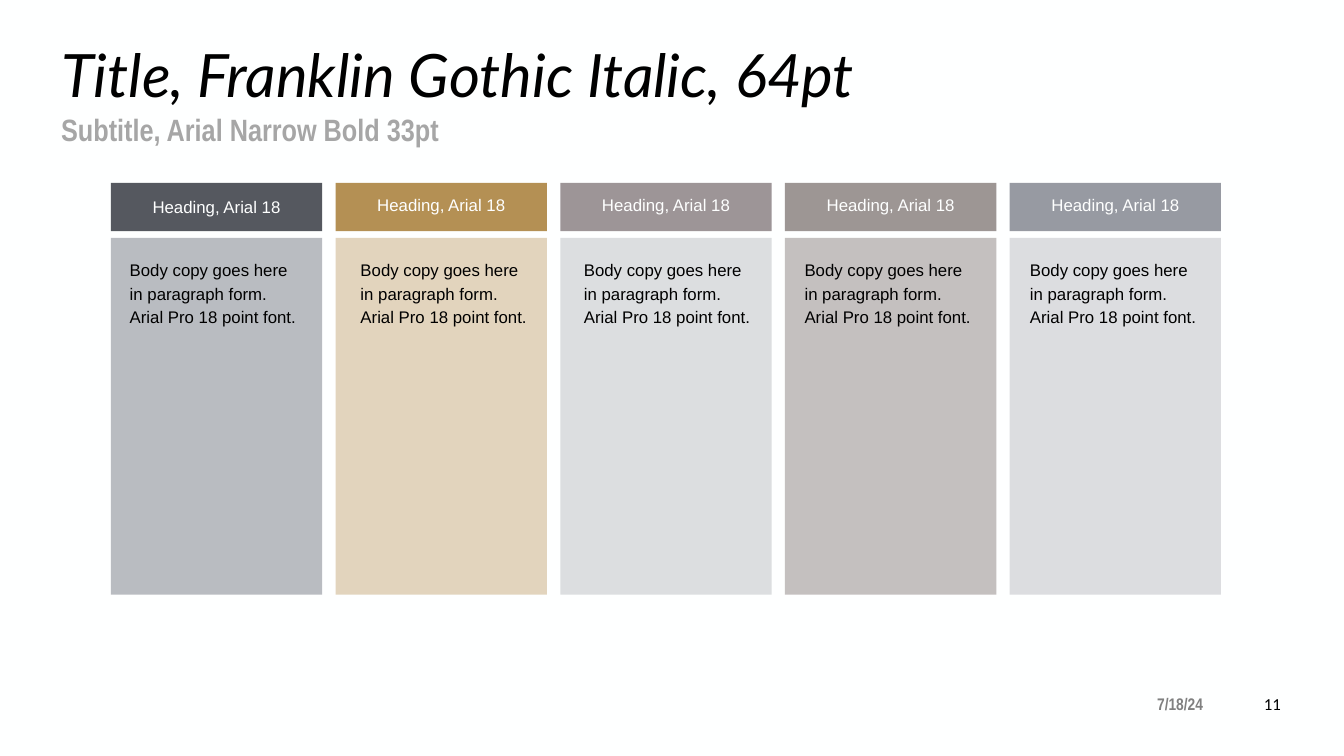
import pptx
import pptx.dml.color
import pptx.enum.shapes
import pptx.enum.text
import pptx.util

RGB = pptx.dml.color.RGBColor
Pt = pptx.util.Pt
ALIGN = pptx.enum.text.PP_ALIGN
ANCHOR = pptx.enum.text.MSO_ANCHOR

WHITE = RGB(0xFE, 0xFF, 0xFF)
BLACK = RGB(0x00, 0x00, 0x00)
SUBTITLE_GRAY = RGB(0xA6, 0xA6, 0xA6)
DATE_GRAY = RGB(0x80, 0x80, 0x80)

SLIDE_W, SLIDE_H = 20, 11.25
HEADING = "Heading, Arial 18"
BODY = "Body copy goes here in paragraph form. Arial Pro 18 point font."

# Heading fill, body fill, heading text drop, body text indent
COLUMNS = [
    (RGB(0x55, 0x58, 0x5F), RGB(0xB9, 0xBC, 0xC1), 0.24, 0.28),
    (RGB(0xB4, 0x90, 0x54), RGB(0xE2, 0xD4, 0xBD), 0.21, 0.37),
    (RGB(0x9D, 0x95, 0x97), RGB(0xDC, 0xDE, 0xE0), 0.21, 0.35),
    (RGB(0x9D, 0x96, 0x94), RGB(0xC4, 0xC0, 0xBF), 0.21, 0.29),
    (RGB(0x97, 0x9A, 0xA2), RGB(0xDC, 0xDD, 0xE0), 0.21, 0.30),
]


def inches(box):
    return [pptx.util.Inches(length) for length in box]


def add_panel(slide, box, color):
    panel = slide.shapes.add_shape(
        pptx.enum.shapes.MSO_SHAPE.RECTANGLE, *inches(box))
    panel.shadow.inherit = False
    panel.fill.solid()
    panel.fill.fore_color.rgb = color
    panel.line.fill.background()


def add_text(slide, box, text, size, font, color, bold=False, italic=False,
             align=ALIGN.LEFT, anchor=ANCHOR.TOP, insets=(0, 0),
             line=None, before=None):
    frame = slide.shapes.add_textbox(*inches(box)).text_frame
    frame.word_wrap = True
    frame.vertical_anchor = anchor
    frame.margin_left = frame.margin_right = pptx.util.Inches(insets[0])
    frame.margin_top = frame.margin_bottom = pptx.util.Inches(insets[1])
    paragraph = frame.paragraphs[0]
    paragraph.alignment = align
    if line:
        paragraph.line_spacing = Pt(line)
    if before:
        paragraph.space_before = Pt(before)
    run = paragraph.add_run()
    run.text = text
    run.font.size = Pt(size)
    run.font.name = font
    run.font.color.rgb = color
    run.font.bold = bold
    run.font.italic = italic


def add_header(slide, box):
    left, top, width, height = box
    title_h = height * 0.614
    add_text(slide, (left, top, width, title_h),
             "Title, Franklin Gothic Italic, 64pt", 64, "Lato", BLACK,
             italic=True, insets=(0, 0.05), before=3.6)
    add_text(slide, (left, top + title_h, width, height - title_h),
             "Subtitle, Arial Narrow Bold 33pt", 33, "Arial Narrow",
             SUBTITLE_GRAY, bold=True, insets=(0, 0.05), before=3.6)


def add_column(slide, box, heading_fill, body_fill, drop, indent):
    left, top, width, height = box
    heading_h, gap = 0.72, 0.1
    body_top = top + heading_h + gap
    add_panel(slide, (left, top, width, heading_h), heading_fill)
    add_panel(slide, (left, body_top, width, height - heading_h - gap),
              body_fill)
    add_text(slide, (left + 0.1, top + drop, width - 0.2, 0.28), HEADING,
             18, "Arial", WHITE, align=ALIGN.CENTER, line=19.4)
    add_text(slide, (left + indent, body_top + 0.28, width * 0.8, 1.02), BODY,
             18, "Arial", BLACK, line=25.2)


def add_columns(slide, box):
    left, top, width, height = box
    gutter = 0.2
    column_w = (width - gutter * (len(COLUMNS) - 1)) / len(COLUMNS)
    for index, style in enumerate(COLUMNS):
        column_left = left + index * (column_w + gutter)
        add_column(slide, (column_left, top, column_w, height), *style)


def add_footer(slide, box):
    left, top, width, height = box
    date_w, number_w = width * 0.668, width * 0.238
    common = dict(align=ALIGN.RIGHT, anchor=ANCHOR.MIDDLE, insets=(0.1, 0.05))
    add_text(slide, (left, top, date_w, height), "7/18/24", 18,
             "Arial Narrow", DATE_GRAY, bold=True, **common)
    add_text(slide, (left + width - number_w, top, number_w, height), "11",
             18, "Calibri", BLACK, **common)


def main():
    deck = pptx.Presentation()
    deck.slide_width, deck.slide_height = inches((SLIDE_W, SLIDE_H))
    slide = deck.slides.add_slide(deck.slide_layouts[6])
    slide.background.fill.solid()
    slide.background.fill.fore_color.rgb = WHITE

    add_footer(slide, (15.67, 10.28, 3.49, 0.4))
    add_columns(slide, (1.65, 2.72, 16.52, 6.13))
    add_header(slide, (0.91, 0.52, 13.97, 1.76))
    deck.save("out.pptx")


if __name__ == "__main__":
    main()
